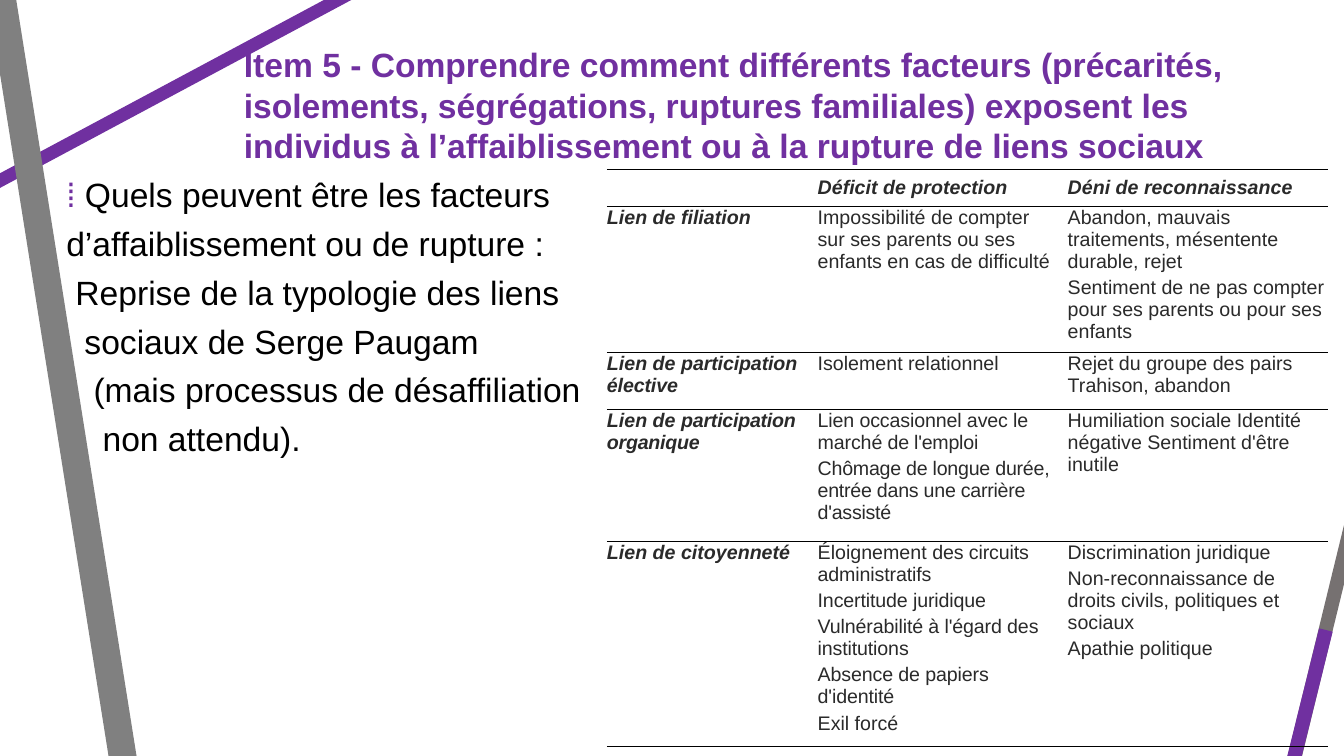
import pptx
import pptx.util
import pptx.dml.color
import pptx.enum.shapes
import pptx.enum.text
import pptx.oxml
import pptx.oxml.ns

Inches, Pt = pptx.util.Inches, pptx.util.Pt

# Content
COLORS = {"purple": "7030A0", "grey": "808080", "dark_grey": "767171",
          "black": "000000", "cell": "2A2A2A"}
TITLE = ("Item 5 - Comprendre comment différents facteurs (précarités, isolements, "
         "ségrégations, ruptures familiales) exposent les individus à "
         "l’affaiblissement ou à la rupture de liens sociaux")
BULLET = "⁞ "
# (text, indent steps)
QUESTION = [
    ("Quels peuvent être les facteurs", 0),
    ("d’affaiblissement ou de rupture :", 0),
    ("Reprise de la typologie des liens", 1),
    ("sociaux de Serge Paugam", 2),
    ("(mais processus de désaffiliation", 3),
    ("non attendu).", 4),
]
# Each cell is a list of paragraphs, each paragraph a list of (text, letter spacing)
LINKS = [
    [[], [[("Déficit de protection", 0)]], [[("Déni de reconnaissance", 0)]]],
    [[[("Lien de filiation", 0)]],
     [[("Impossibilité de compter sur ses parents ou ses enfants en cas de difficulté", 0)]],
     [[("Abandon, mauvais traitements, mésentente durable, rejet", 0)],
      [("Sentiment de ne pas compter pour ses parents ou pour ses enfants", 0)]]],
    [[[("Lien de ", 0), ("participation élective", -0.1)]],
     [[("Isolement relationnel", 0)]],
     [[("Rejet du groupe des pairs Trahison, abandon", 0)]]],
    [[[("Lien de ", 0), ("participation organique", -0.2)]],
     [[("Lien occasionnel avec le marché ", -0.1), ("de l'emploi", -0.2)],
      [("Chômage de longue durée, entrée dans une carrière d'assisté", -0.2)]],
     [[("Humiliation sociale Identité négative Sentiment d'être inutile", 0)]]],
    [[[("Lien de citoyenneté", 0)]],
     [[("Éloignement ", 0), ("des circuits administratifs", -0.1)],
      [("Incertitude juridique", -0.1)],
      [("Vulnérabilité à l'égard des institutions", -0.1)],
      [("Absence de papiers d'identité", -0.1)],
      [("Exil forcé", 0)]],
     [[("Discrimination juridique", 0)],
      [("Non-reconnaissance de droits civils, politiques et sociaux", 0)],
      [("Apathie politique", 0)]]],
]
COLUMN_WIDTHS = [2.01, 2.48, 2.66]
ROW_HEIGHTS = [0.37, 1.45, 0.56, 1.31, 2.03]
# (from, to, colour, width)
TOP_STRIPES = [((-2.09, 2.91), (5.16, -0.97), "purple", 9.25),
               ((0, -0.14), (1.26, 7.78), "grey", 19.75)]
CORNER_STRIPES = [((12.26, 9.89), (13.65, 4.19), "dark_grey", 10),
                  ((12.18, 10.15), (13.15, 6.25), "purple", 10)]

# Formats
TITLE_FONT = {"name": "Arial", "size": Pt(24), "bold": True}
QUESTION_FONT = {"name": "Arial", "size": Pt(24)}
CELL_FONT = {"name": "Arial", "size": Pt(14), "bold": False, "italic": False}
HEADING_FONT = {**CELL_FONT, "bold": True, "italic": True}
CELL_MARGINS = dict.fromkeys(
    ["margin_left", "margin_top", "margin_right", "margin_bottom"], 0)
BOX_FORMAT = {"word_wrap": True,
              "auto_size": pptx.enum.text.MSO_AUTO_SIZE.SHAPE_TO_FIT_TEXT}
SPACE_STEP = 0.09


def apply(target, values):
    for name, value in values.items():
        setattr(target, name, value)


def rgb(color):
    return pptx.dml.color.RGBColor.from_string(COLORS[color])


def add_run(paragraph, text, font, color, spacing=0):
    run = paragraph.add_run()
    run.text = text
    apply(run.font, font)
    run.font.color.rgb = rgb(color)
    if spacing:
        run.font._element.set("spc", str(round(spacing * 100)))


def indent(paragraph, inches):
    properties = paragraph._p.get_or_add_pPr()
    properties.set("marL", str(Inches(inches)))
    properties.set("indent", "0")


def paragraphs(frame, count):
    return [frame.paragraphs[0]] + [frame.add_paragraph() for _ in range(count - 1)]


def add_stripes(slide, stripes):
    for start, end, color, width in stripes:
        stripe = slide.shapes.add_connector(
            pptx.enum.shapes.MSO_CONNECTOR.STRAIGHT,
            *(Inches(value) for value in start + end))
        stripe.line.color.rgb = rgb(color)
        stripe.line.width = Pt(width)
        stripe._element.spPr.append(pptx.oxml.parse_xml(
            f'<a:effectLst {pptx.oxml.ns.nsdecls("a")}/>'))


def add_box(slide, *place):
    frame = slide.shapes.add_textbox(*(Inches(value) for value in place)).text_frame
    apply(frame, BOX_FORMAT)
    return frame


def set_borders(cell):
    rule = f'<a:solidFill><a:srgbClr val="{COLORS["black"]}"/></a:solidFill>'
    sides = {"lnL": "<a:noFill/>", "lnR": "<a:noFill/>", "lnT": rule, "lnB": rule}
    properties = cell._tc.get_or_add_tcPr()
    for position, (side, fill) in enumerate(sides.items()):
        properties.insert(position, pptx.oxml.parse_xml(
            f'<a:{side} {pptx.oxml.ns.nsdecls("a")} w="{Pt(1)}">{fill}</a:{side}>'))


def fill_cell(cell, content, row, column):
    apply(cell, CELL_MARGINS)
    cell.fill.background()
    set_borders(cell)
    heading = row == 0 or column == 0
    if row == 0:
        cell.vertical_anchor = pptx.enum.text.MSO_ANCHOR.MIDDLE
    for paragraph, parts in zip(paragraphs(cell.text_frame, len(content)), content):
        if column:
            indent(paragraph, 0.08)
            paragraph.space_before = Pt(3)
        for text, spacing in parts:
            add_run(paragraph, text, HEADING_FONT if heading else CELL_FONT,
                    "cell", spacing)


def main():
    deck = pptx.Presentation()
    deck.slide_width, deck.slide_height = Inches(13.33), Inches(7.5)
    slide = deck.slides.add_slide(deck.slide_layouts[6])

    # Title over the left stripes
    add_stripes(slide, TOP_STRIPES)
    title = add_box(slide, 2.32, 0.39, 10.88, 1.31).paragraphs[0]
    title.space_before = Pt(6)
    add_run(title, TITLE, TITLE_FONT, "purple")
    add_stripes(slide, CORNER_STRIPES)

    # Question, each line stepped to the right
    question = add_box(slide, 0.56, 1.68, 12.67, 2.95)
    lines = paragraphs(question, len(QUESTION))
    add_run(lines[0], BULLET, QUESTION_FONT, "purple")
    for line, (text, steps) in zip(lines, QUESTION):
        line.space_before = Pt(6)
        indent(line, steps * SPACE_STEP)
        add_run(line, text, QUESTION_FONT, "black")

    # Table of social links
    links = slide.shapes.add_table(
        len(ROW_HEIGHTS), len(COLUMN_WIDTHS), Inches(6.02), Inches(1.68),
        Inches(sum(COLUMN_WIDTHS)), Inches(sum(ROW_HEIGHTS))).table
    apply(links, {"first_row": False, "horz_banding": False})
    for column, width in zip(links.columns, COLUMN_WIDTHS):
        column.width = Inches(width)
    for row, height in zip(links.rows, ROW_HEIGHTS):
        row.height = Inches(height)
    for row, contents in enumerate(LINKS):
        for column, content in enumerate(contents):
            fill_cell(links.cell(row, column), content, row, column)

    deck.save("out.pptx")


if __name__ == "__main__":
    main()
